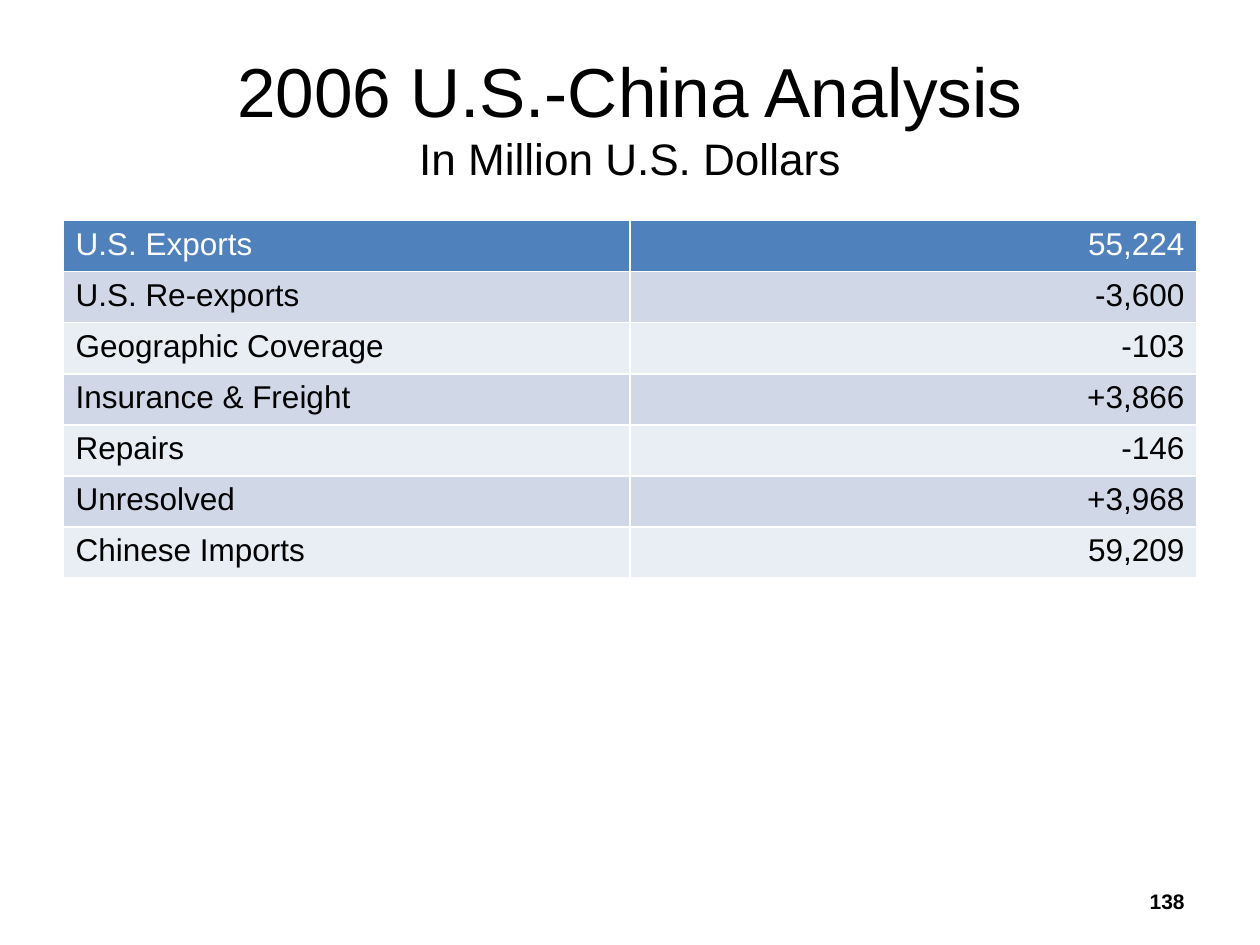
import lxml.etree
import pptx
import pptx.dml.color
import pptx.enum.text
import pptx.oxml.ns
import pptx.util

Pt = pptx.util.Pt
RGB = pptx.dml.color.RGBColor.from_string
ALIGN = pptx.enum.text.PP_ALIGN
MIDDLE = pptx.enum.text.MSO_ANCHOR.MIDDLE
qn = pptx.oxml.ns.qn

# Content
HEADING = "2006 U.S.-China Analysis"
UNITS = "In Million U.S. Dollars"
PAGE_NUMBER = "138"
TRADE_ROWS = [
    ("U.S. Exports", "55,224"),
    ("U.S. Re-exports", "-3,600"),
    ("Geographic Coverage", "-103"),
    ("Insurance & Freight", "+3,866"),
    ("Repairs", "-146"),
    ("Unresolved", "+3,968"),
    ("Chinese Imports", "59,209"),
]

THEME = {
    "font": "Arial", "text": "000000", "header_text": "FFFFFF",
    "header": "4F81BD", "bands": ("D0D8E8", "E9EDF4"), "rule": "FFFFFF",
    "heading_size": 39.6, "break_size": 44, "units_size": 25.2,
    "table_size": 18, "page_size": 12,
}

# Layout in points
SLIDE_WIDTH, SLIDE_HEIGHT = 720, 540
MARGIN = 36
CONTENT_WIDTH = SLIDE_WIDTH - 2 * MARGIN
TABLE_TOP, ROW_HEIGHT = 126, 29.2
PAGE_WIDTH = 168


def write(paragraph, text, size, color=THEME["text"], bold=False, align=ALIGN.LEFT):
    paragraph.alignment = align
    run = paragraph.add_run()
    run.text = text
    run.font.name = THEME["font"]
    run.font.size = Pt(size)
    run.font.bold = bold
    run.font.color.rgb = RGB(color)


def draw_borders(cell, color, width):
    properties = cell._tc.get_or_add_tcPr()
    for position, side in enumerate(("a:lnL", "a:lnR", "a:lnT", "a:lnB")):
        line = lxml.etree.Element(qn(side), w=str(Pt(width)))
        fill = lxml.etree.SubElement(line, qn("a:solidFill"))
        lxml.etree.SubElement(fill, qn("a:srgbClr"), val=color)
        properties.insert(position, line)


def add_heading(slide):
    title = slide.shapes.title
    title.left, title.top = Pt(MARGIN), Pt(21.6)
    title.width, title.height = Pt(CONTENT_WIDTH), Pt(90)
    frame = title.text_frame
    frame.word_wrap = True
    frame.vertical_anchor = MIDDLE
    frame.auto_size = pptx.enum.text.MSO_AUTO_SIZE.NONE
    paragraph = frame.paragraphs[0]
    write(paragraph, HEADING, THEME["heading_size"], align=ALIGN.CENTER)
    # The larger line break opens the gap above the units
    paragraph.add_line_break()
    line_break = paragraph._p.find(qn("a:br"))
    lxml.etree.SubElement(line_break, qn("a:rPr"), sz=str(THEME["break_size"] * 100))
    write(paragraph, UNITS, THEME["units_size"], align=ALIGN.CENTER)


def add_trade_table(slide):
    columns = len(TRADE_ROWS[0])
    table = slide.shapes.add_table(
        len(TRADE_ROWS), columns, Pt(MARGIN), Pt(TABLE_TOP),
        Pt(CONTENT_WIDTH), Pt(ROW_HEIGHT * len(TRADE_ROWS))).table
    for column in table.columns:
        column.width = Pt(CONTENT_WIDTH / columns)
    for r, values in enumerate(TRADE_ROWS):
        table.rows[r].height = Pt(ROW_HEIGHT)
        fill = THEME["bands"][(r - 1) % 2] if r else THEME["header"]
        color = THEME["text"] if r else THEME["header_text"]
        for c, value in enumerate(values):
            cell = table.cell(r, c)
            cell.fill.solid()
            cell.fill.fore_color.rgb = RGB(fill)
            draw_borders(cell, THEME["rule"], 1)
            write(cell.text_frame.paragraphs[0], value, THEME["table_size"],
                  color=color, align=ALIGN.RIGHT if c else ALIGN.LEFT)


def add_page_number(slide):
    box = slide.shapes.add_textbox(
        Pt(SLIDE_WIDTH - MARGIN - PAGE_WIDTH), Pt(500.4), Pt(PAGE_WIDTH), Pt(28.8))
    box.text_frame.word_wrap = True
    box.text_frame.vertical_anchor = MIDDLE
    write(box.text_frame.paragraphs[0], PAGE_NUMBER, THEME["page_size"],
          bold=True, align=ALIGN.RIGHT)


def main():
    deck = pptx.Presentation()
    deck.slide_width, deck.slide_height = Pt(SLIDE_WIDTH), Pt(SLIDE_HEIGHT)
    slide = deck.slides.add_slide(deck.slide_layouts.get_by_name("Title Only"))
    add_heading(slide)
    add_trade_table(slide)
    add_page_number(slide)
    deck.save("out.pptx")


if __name__ == "__main__":
    main()
